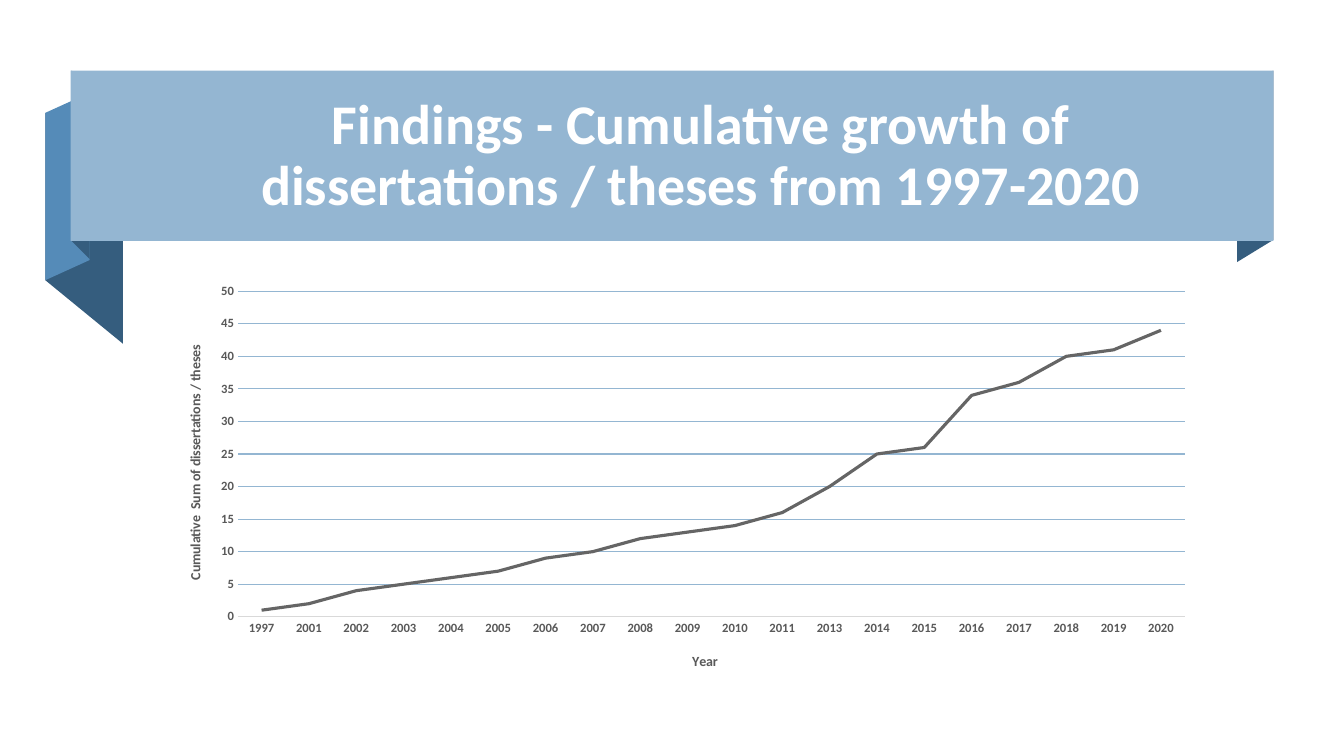
"""Build the slide on cumulative growth of dissertations and theses."""
from lxml.etree import SubElement
from pptx import Presentation
from pptx.chart.data import CategoryChartData
from pptx.dml.color import RGBColor
from pptx.enum.chart import XL_CHART_TYPE, XL_TICK_MARK
from pptx.enum.shapes import MSO_SHAPE
from pptx.enum.text import MSO_ANCHOR, PP_ALIGN
from pptx.oxml import parse_xml
from pptx.oxml.ns import nsdecls, qn
from pptx.util import Inches, Pt

FONT = "Calibri"
WHITE = RGBColor(0xFF, 0xFF, 0xFF)
LIGHT = RGBColor(0x94, 0xB6, 0xD2)
MID = RGBColor(0x55, 0x8B, 0xB8)
DARK = RGBColor(0x35, 0x5D, 0x7E)
TEXT_GREY = RGBColor(0x59, 0x59, 0x59)
LINE_GREY = RGBColor(0x65, 0x65, 0x65)
AXIS_GREY = RGBColor(0xD9, 0xD9, 0xD9)

TITLE = "Findings - Cumulative growth of dissertations / theses from 1997-2020"
TITLE_BOX = (1.48, 0.83, 10.94, 1.45)
BANNER = (0.7, 0.7, 11.93, 1.69)
RIBBON_FOLDS = [
    (DARK, [(12.63, 2.38), (12.27, 2.6), (12.27, 0.91), (12.63, 0.7)]),
    (DARK, [(1.22, 3.41), (0.45, 2.78), (0.45, 1.12), (1.22, 1.75)]),
    (MID, [(0.89, 2.58), (0.45, 2.78), (0.45, 1.12), (0.89, 0.92)]),
    (DARK, [(0.89, 2.57), (0.71, 2.39), (0.71, 0.7), (0.89, 0.89)]),
]
CHART_BOX = (1.56, 2.73, 10.4, 4.06)
PLOT_BOX = (2.36, 2.89, 9.39, 3.23)
YEAR_TITLE = ("Year", 6.84, 6.45)
SUM_TITLE = ("Cumulative  Sum of dissertations / theses", 1.82, 3.4)
TOTALS = {
    "1997": 1, "2001": 2, "2002": 4, "2003": 5, "2004": 6,
    "2005": 7, "2006": 9, "2007": 10, "2008": 12, "2009": 13,
    "2010": 14, "2011": 16, "2013": 20, "2014": 25, "2015": 26,
    "2016": 34, "2017": 36, "2018": 40, "2019": 41, "2020": 44,
}


def style_font(font, size, color):
    font.name, font.size, font.bold = FONT, Pt(size), True
    font.color.rgb = color


def write_text(tf, text, *, size, color, align=PP_ALIGN.CENTER, spacing=None):
    p = tf.paragraphs[0]
    p.alignment, p.line_spacing = align, spacing
    r = p.add_run()
    r.text = text
    style_font(r.font, size, color)


def fill_plain(s, color):
    s.shadow.inherit = False
    s.fill.solid()
    s.fill.fore_color.rgb = color
    s.line.fill.background()


def place(element, index, left, top, width=None, height=None):
    for old in element.findall(qn("c:layout")):
        element.remove(old)
    layout = parse_xml(f"<c:layout {nsdecls('c')}/>")
    element.insert(index, layout)
    manual = SubElement(layout, qn("c:manualLayout"))
    x, y, w, h = CHART_BOX
    settings = [("xMode", "edge"), ("yMode", "edge"),
                ("x", (left - x) / w), ("y", (top - y) / h)]
    if width:
        settings.insert(0, ("layoutTarget", "inner"))
        settings += [("w", width / w), ("h", height / h)]
    for name, value in settings:
        SubElement(manual, qn(f"c:{name}")).set("val", str(value))


def style_axis(axis, title):
    text, left, top = title
    axis.major_tick_mark = axis.minor_tick_mark = XL_TICK_MARK.NONE
    style_font(axis.tick_labels.font, 9, TEXT_GREY)
    write_text(axis.axis_title.text_frame, text, size=10, color=TEXT_GREY)
    place(axis.axis_title._element, 1, left, top)


def add_ribbon(slide):
    for color, points in RIBBON_FOLDS:
        start, *rest = [(Inches(x), Inches(y)) for x, y in points]
        builder = slide.shapes.build_freeform(*start)
        builder.add_line_segments(rest, close=True)
        fill_plain(builder.convert_to_shape(), color)
    banner = slide.shapes.add_shape(MSO_SHAPE.RECTANGLE, *map(Inches, BANNER))
    fill_plain(banner, LIGHT)
    tf = slide.shapes.add_textbox(*map(Inches, TITLE_BOX)).text_frame
    tf.word_wrap = True
    tf.vertical_anchor = MSO_ANCHOR.MIDDLE
    write_text(tf, TITLE, size=40, color=WHITE, spacing=0.9)


def add_growth_chart(slide):
    data = CategoryChartData()
    data.categories = list(TOTALS)
    data.add_series("Series 1", list(TOTALS.values()))
    chart = slide.shapes.add_chart(
        XL_CHART_TYPE.LINE, *map(Inches, CHART_BOX), data).chart
    chart.has_legend = chart.has_title = False
    chart.font.name, chart.font.size = FONT, Pt(10)
    plot = chart.plots[0]
    plot.vary_by_categories = False
    series = plot.series[0]
    series.smooth = False
    series.format.line.color.rgb = LINE_GREY
    series.format.line.width = Pt(2.25)

    years, sums = chart.category_axis, chart.value_axis
    style_axis(years, YEAR_TITLE)
    style_axis(sums, SUM_TITLE)
    years.format.line.color.rgb = AXIS_GREY
    years.format.line.width = Pt(0.75)
    sums.minimum_scale, sums.maximum_scale, sums.major_unit = 0, 50, 5
    sums.format.line.fill.background()
    sums.has_major_gridlines = True
    grid = sums.major_gridlines.format.line
    grid.color.rgb, grid.width = LIGHT, Pt(0.75)
    place(chart._chartSpace.chart.plotArea, 0, *PLOT_BOX)


def main():
    prs = Presentation()
    prs.slide_width, prs.slide_height = Inches(13.33), Inches(7.5)
    slide = prs.slides.add_slide(prs.slide_layouts[6])
    add_ribbon(slide)
    add_growth_chart(slide)
    prs.save("out.pptx")


if __name__ == "__main__":
    main()
